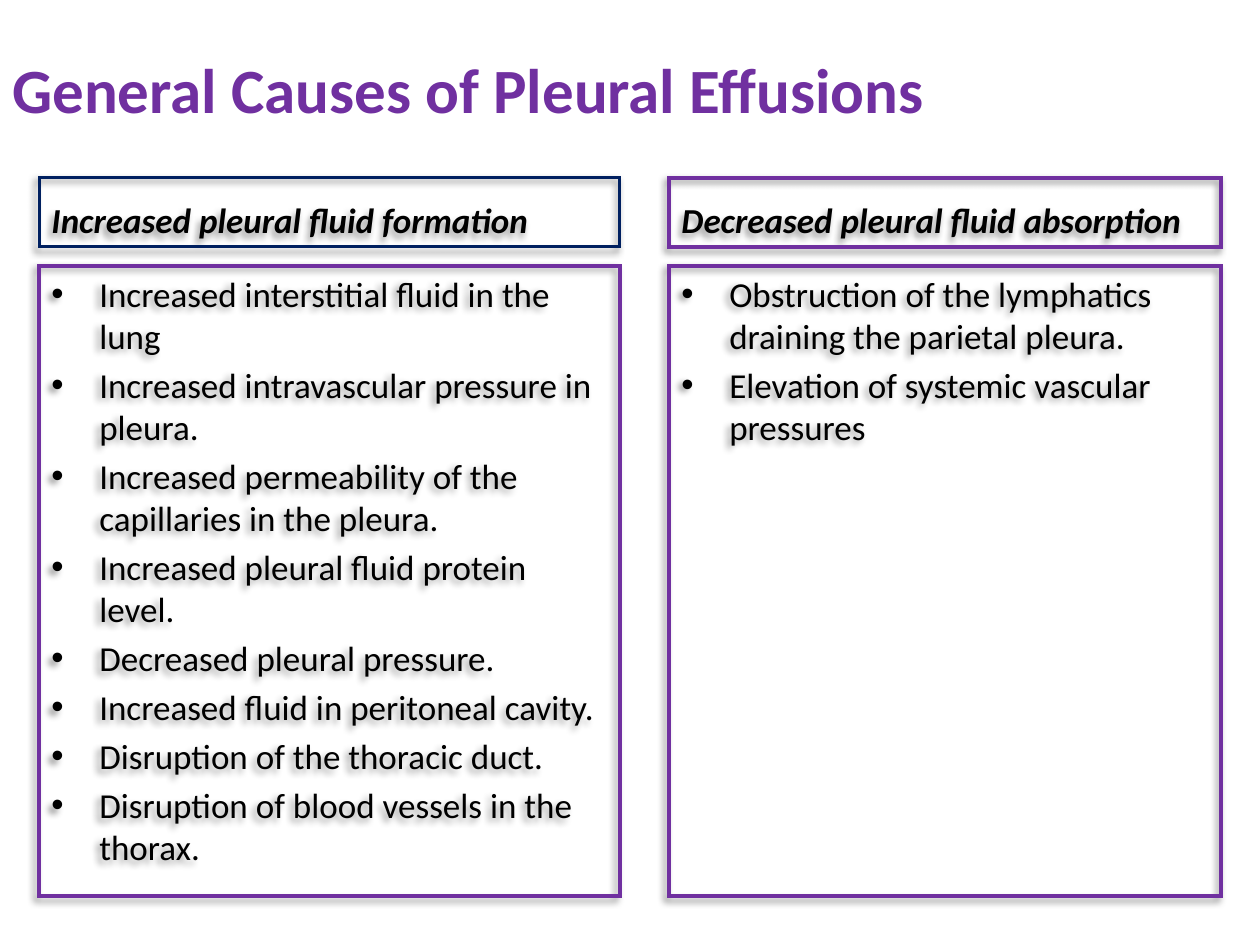
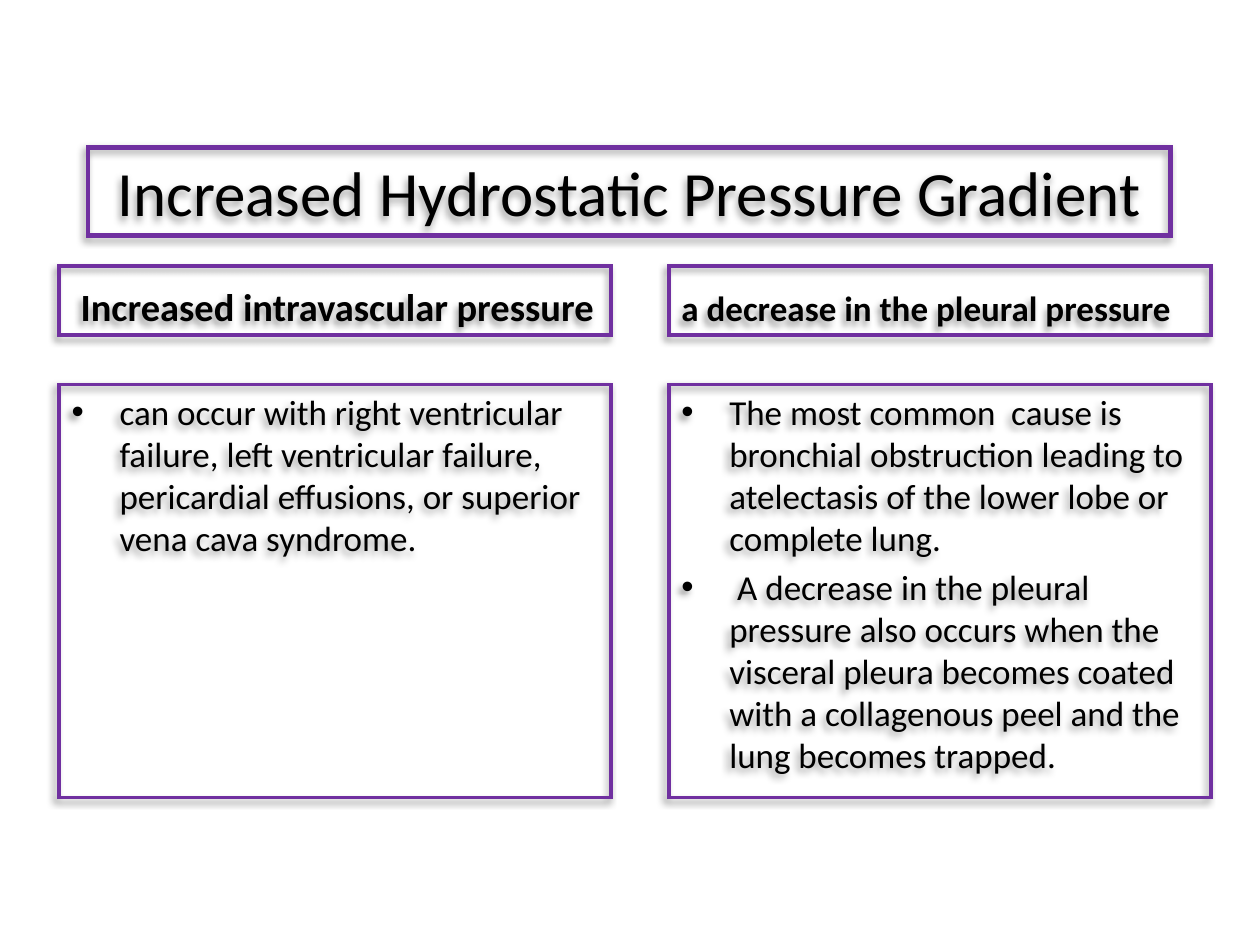
from dataclasses import dataclass

from lxml.etree import SubElement
from pptx import Presentation
from pptx.dml.color import RGBColor
from pptx.enum.text import MSO_ANCHOR as Anchor, PP_ALIGN as Align
from pptx.oxml.ns import qn
from pptx.util import Inches, Pt

FONT = "Calibri"
PURPLE = "7030A0"
NAVY = "002060"
BLACK = "000000"
HEADING_HEIGHT = 0.55
BULLET_INDENT = 0.38


@dataclass
class Box:
    left: float
    top: float
    width: float
    height: float
    line_color: str | None = PURPLE
    line_width: float = 2
    anchor: Anchor = Anchor.TOP
    left_inset: float = 0.1
    right_inset: float = 0.1


@dataclass
class TextStyle:
    size: float = 20
    color: str = BLACK
    bold: bool = False
    italic: bool = False
    align: Align = Align.LEFT
    bulleted: bool = False


@dataclass
class Column:
    left: float
    width: float
    heading: str
    causes: list[str]
    heading_color: str = PURPLE
    heading_line: float = 2
    body_line: float = 2
    heading_size: float = 20
    heading_inset: float = 0.1


@dataclass
class CauseSlide:
    title: str
    title_box: Box
    title_style: TextStyle
    heading_top: float
    body_top: float
    body_height: float
    italic_headings: bool
    columns: list[Column]


SLIDES = [
    CauseSlide(
        "General Causes of Pleural Effusions",
        Box(0, 0.23, 8.83, 0.94, line_color=None, anchor=Anchor.MIDDLE),
        TextStyle(36, PURPLE, bold=True),
        1.41, 2.11, 5, True,
        [
            Column(0.31, 4.61, "Increased pleural fluid formation", [
                "Increased interstitial fluid in the lung",
                "Increased intravascular pressure in pleura.",
                "Increased permeability of the capillaries in the pleura.",
                "Increased pleural fluid protein level.",
                "Decreased pleural pressure.",
                "Increased fluid in peritoneal cavity.",
                "Disruption of the thoracic duct.",
                "Disruption of blood vessels in the thorax.",
            ], heading_color=NAVY, heading_line=1.75),
            Column(5.31, 4.38, "Decreased pleural fluid absorption", [
                "Obstruction of the lymphatics draining the parietal pleura.",
                "Elevation of systemic vascular pressures",
            ], heading_line=2.25, body_line=2.25),
        ],
    ),
    CauseSlide(
        "Increased Hydrostatic Pressure Gradient",
        Box(0.7, 1.17, 8.59, 0.7, line_width=2.5, anchor=Anchor.MIDDLE),
        TextStyle(36, align=Align.CENTER),
        2.11, 3.05, 3.28, False,
        [
            Column(0.47, 4.38, "Increased intravascular pressure", [
                "can occur with right ventricular failure, left ventricular failure, "
                "pericardial effusions, or superior vena cava syndrome.",
            ], heading_size=22, heading_inset=0.17),
            Column(5.31, 4.3, "a decrease in the pleural pressure", [
                "The most common  cause is bronchial obstruction leading to "
                "atelectasis of the lower lobe or complete lung.",
                " A decrease in the pleural pressure also occurs when the visceral "
                "pleura becomes coated with a collagenous peel and the lung becomes trapped.",
            ]),
        ],
    ),
]


def rgb(color: str) -> RGBColor:
    return RGBColor.from_string(color)


def add_outline(s, color: str, width: float) -> None:
    s.line.color.rgb = rgb(color)
    s.line.width = Pt(width)
    SubElement(s.line._get_or_add_ln(), qn("a:miter"), lim="800000")


def add_shadow(s) -> None:
    effects = SubElement(s._element.spPr, qn("a:effectLst"))
    shadow = SubElement(effects, qn("a:outerShdw"), blurRad=str(Pt(4)), dist=str(Pt(3)),
                        dir=str(135 * 60000), algn="tr", rotWithShape="0")
    shade = SubElement(shadow, qn("a:srgbClr"), val=BLACK)
    SubElement(shade, qn("a:alpha"), val="40000")


def add_bullet(p) -> None:
    pPr = p._p.get_or_add_pPr()
    pPr.set("marL", str(Inches(BULLET_INDENT)))
    pPr.set("indent", str(-Inches(BULLET_INDENT)))
    SubElement(pPr, qn("a:buFont"), typeface="Arial")
    SubElement(pPr, qn("a:buChar"), char="•")


def add_text(slide, box: Box, lines: list[str], style: TextStyle) -> None:
    s = slide.shapes.add_textbox(Inches(box.left), Inches(box.top),
                                 Inches(box.width), Inches(box.height))
    if box.line_color:
        add_outline(s, box.line_color, box.line_width)
        add_shadow(s)
    tf = s.text_frame
    tf.word_wrap = True
    tf.vertical_anchor = box.anchor
    tf.margin_left = Inches(box.left_inset)
    tf.margin_right = Inches(box.right_inset)
    tf.text = "\n".join(lines)
    for i, p in enumerate(tf.paragraphs):
        p.alignment = style.align
        if style.bulleted:
            add_bullet(p)
        if i:
            p.space_before = Pt(style.size * 0.2)
        for r in p.runs:
            r.font.name = FONT
            r.font.size = Pt(style.size)
            r.font.bold = style.bold
            r.font.italic = style.italic
            r.font.color.rgb = rgb(style.color)


def add_cause_slide(prs, content: CauseSlide) -> None:
    slide = prs.slides.add_slide(prs.slide_layouts[6])
    add_text(slide, content.title_box, [content.title], content.title_style)
    for column in content.columns:
        heading_box = Box(column.left, content.heading_top, column.width, HEADING_HEIGHT,
                          column.heading_color, column.heading_line, Anchor.BOTTOM,
                          column.heading_inset, 0.05)
        heading_style = TextStyle(column.heading_size, bold=True,
                                  italic=content.italic_headings)
        add_text(slide, heading_box, [column.heading], heading_style)
        body_box = Box(column.left, content.body_top, column.width, content.body_height,
                       line_width=column.body_line)
        add_text(slide, body_box, column.causes, TextStyle(bulleted=True))


def main() -> None:
    prs = Presentation()
    prs.slide_width = Inches(10)
    prs.slide_height = Inches(7.5)
    for content in SLIDES:
        add_cause_slide(prs, content)
    prs.save("out.pptx")


if __name__ == "__main__":
    main()
